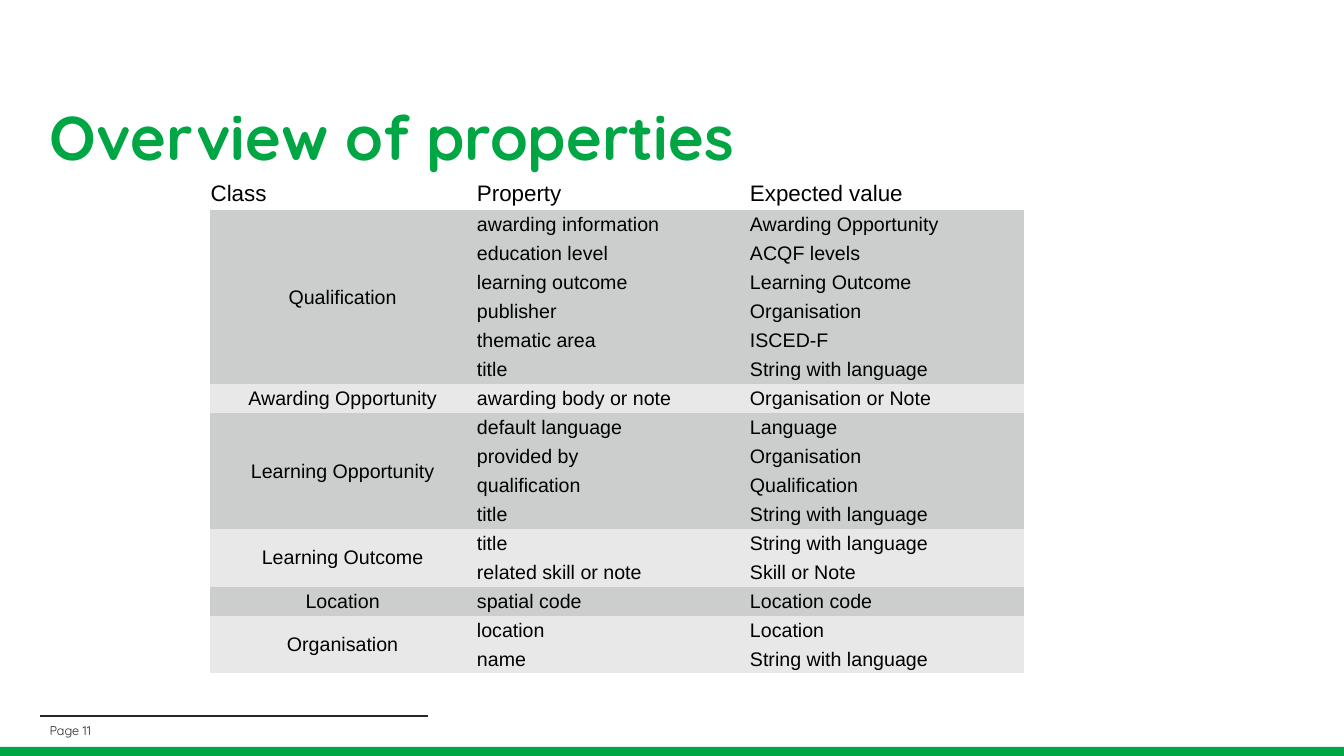
from lxml.etree import SubElement
from pptx import Presentation
from pptx.dml.color import RGBColor
from pptx.enum.shapes import MSO_CONNECTOR, MSO_SHAPE
from pptx.enum.text import MSO_ANCHOR, MSO_AUTO_SIZE, PP_ALIGN
from pptx.oxml.ns import qn
from pptx.util import Cm, Pt

GREEN, DARK, BLACK = "00A643", "24282A", "000000"
BANDS = "CCCDCD", "E8E8E8"
PLAIN = "{2D5ABB26-0587-4C30-8999-92F81FD0307C}"
HEADS = "Class", "Property", "Expected value"
GROUPS = [
    ("Qualification", [
        ("awarding information", "Awarding Opportunity"),
        ("education level", "ACQF levels"),
        ("learning outcome", "Learning Outcome"),
        ("publisher", "Organisation"),
        ("thematic area", "ISCED-F"),
        ("title", "String with language"),
    ]),
    ("Awarding Opportunity", [
        ("awarding body or note", "Organisation or Note"),
    ]),
    ("Learning Opportunity", [
        ("default language", "Language"),
        ("provided by", "Organisation"),
        ("qualification", "Qualification"),
        ("title", "String with language"),
    ]),
    ("Learning Outcome", [
        ("title", "String with language"),
        ("related skill or note", "Skill or Note"),
    ]),
    ("Location", [
        ("spatial code", "Location code"),
    ]),
    ("Organisation", [
        ("location", "Location"),
        ("name", "String with language"),
    ]),
]


def paint(color, shade):
    """Set a fill or a font to a hex colour."""
    if hasattr(color, "solid"):
        color.solid()
        color.fore_color.rgb = RGBColor.from_string(shade)
    else:
        color.color.rgb = RGBColor.from_string(shade)


def write(frame, text, size=14, face="Arial", shade=BLACK, bold=False,
          align=PP_ALIGN.LEFT, space=1.0):
    frame.word_wrap = True
    para = frame.paragraphs[0]
    para.alignment, para.line_spacing = align, space
    run = para.add_run()
    run.text = text
    run.font.name, run.font.size, run.font.bold = face, Pt(size), bold
    paint(run.font, shade)


deck = Presentation()
deck.slide_width, deck.slide_height = Cm(33.87), Cm(19.05)
slide = deck.slides.add_slide(deck.slide_layouts[5])
shapes = slide.shapes

# Footer
bar = shapes.add_shape(MSO_SHAPE.RECTANGLE, Cm(-0.08), Cm(18.82), Cm(34.03), Cm(0.33))
bar.shadow.inherit = False
paint(bar.fill, GREEN)
bar.line.fill.background()

rule = shapes.add_connector(MSO_CONNECTOR.STRAIGHT, Cm(1), Cm(18.05), Cm(10.78), Cm(18.05))
paint(rule.line.fill, DARK)
rule.line.width = Pt(1.5)
SubElement(rule._element.spPr, qn("a:effectLst"))

page = shapes.add_textbox(Cm(1), Cm(18.16), Cm(10.3), Cm(0.48)).text_frame
page.vertical_anchor = MSO_ANCHOR.MIDDLE
write(page, "Page 11", size=9, face="Quicksand", shade=DARK)

# Title
title = shapes.title
title.left, title.top, title.width, title.height = Cm(1), Cm(1.7), Cm(31.85), Cm(3.68)
title.text_frame.auto_size = MSO_AUTO_SIZE.NONE
title.text_frame.vertical_anchor = MSO_ANCHOR.MIDDLE
write(title.text_frame, "Overview of properties", size=44, face="Quicksand",
      shade=GREEN, bold=True, space=0.9)

# Table
count = 1 + sum(len(props) for name, props in GROUPS)
table = shapes.add_table(count, 3, Cm(5.28), Cm(4.45), Cm(20.52), Cm(12.54)).table
table._tbl.tblPr.find(qn("a:tableStyleId")).text = PLAIN
table.first_row = table.horz_banding = False
for col, width in zip(table.columns, (6.71, 6.88, 6.93)):
    col.width = Cm(width)
for row in table.rows:
    row.height = Cm(0.73)
table.rows[0].height = Cm(0.84)

for cell in table.iter_cells():
    cell.vertical_anchor = MSO_ANCHOR.MIDDLE
    cell.margin_left = cell.margin_right = cell.margin_top = Cm(0.03)
    cell.margin_bottom = 0

for col, head in enumerate(HEADS):
    write(table.cell(0, col).text_frame, head, size=16, align=PP_ALIGN.JUSTIFY)

top = 1
for order, (name, props) in enumerate(GROUPS):
    for row, pair in enumerate(props, top):
        for col in range(3):
            paint(table.cell(row, col).fill, BANDS[order % 2])
        for col, text in enumerate(pair, 1):
            write(table.cell(row, col).text_frame, text, align=PP_ALIGN.JUSTIFY)
    first = table.cell(top, 0)
    write(first.text_frame, name, align=PP_ALIGN.CENTER)
    if len(props) > 1:
        first.merge(table.cell(top + len(props) - 1, 0))
    top += len(props)

deck.save("out.pptx")
